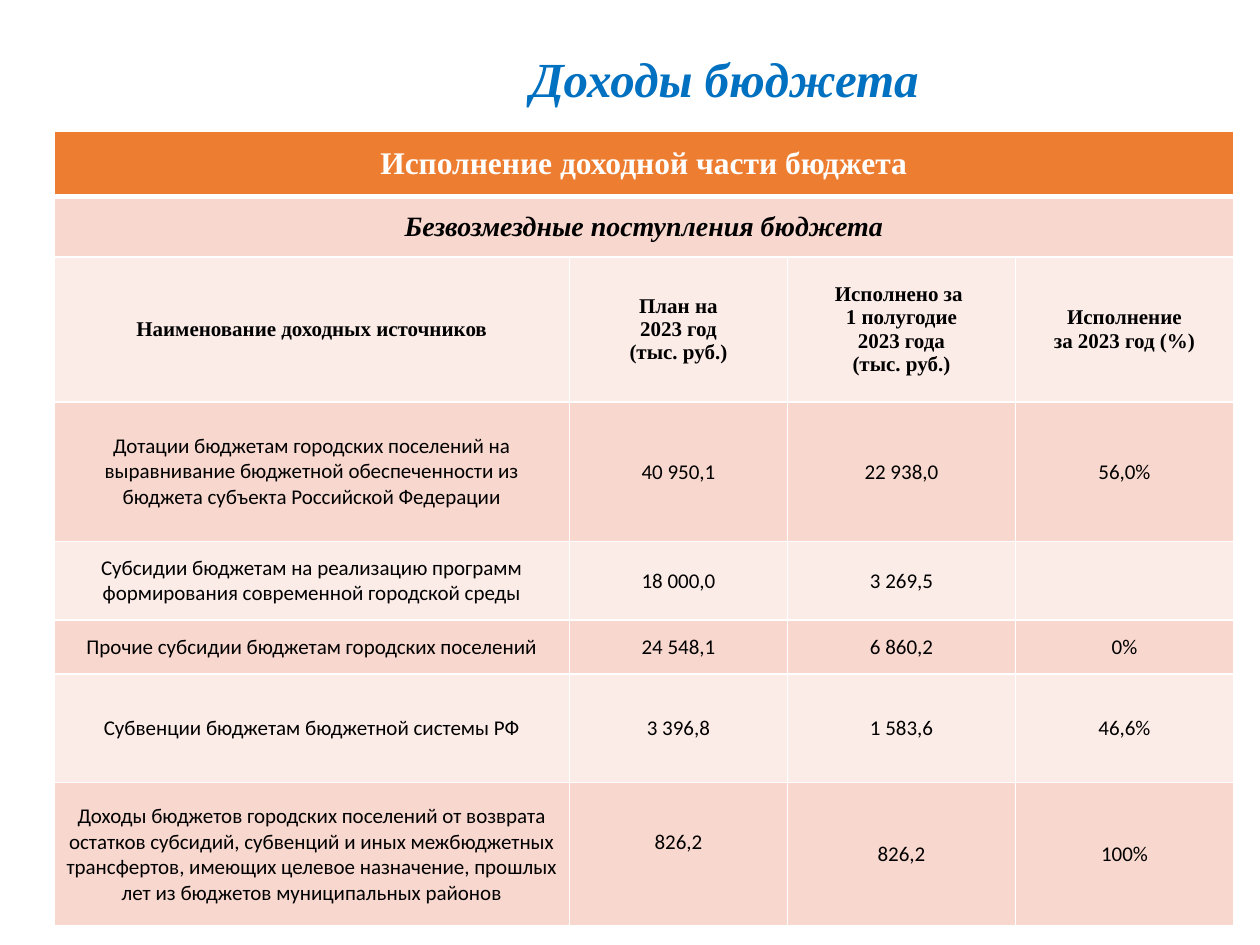
from lxml.etree import SubElement
from pptx import Presentation
from pptx.dml.color import RGBColor
from pptx.enum.text import MSO_ANCHOR, PP_ALIGN
from pptx.oxml.ns import qn
from pptx.util import Inches, Pt

BLUE = RGBColor(0x00, 0x70, 0xC0)
ORANGE = RGBColor(0xED, 0x7D, 0x31)
PEACH = RGBColor(0xF8, 0xD7, 0xCE)
PALE = RGBColor(0xFC, 0xEC, 0xE8)
WHITE = RGBColor(0xFF, 0xFF, 0xFF)
BLACK = RGBColor(0x00, 0x00, 0x00)
SERIF = "Times New Roman"

TITLE = "Доходы бюджета"
INCOME = [
    ("Исполнение доходной части бюджета", "", "", ""),
    ("Безвозмездные поступления бюджета", "", "", ""),
    (
        "Наименование доходных источников",
        "План на\n2023 год\n(тыс. руб.)",
        "Исполнено за \v1 полугодие\n2023 года\n(тыс. руб.)",
        "Исполнение\vза 2023 год (%)",
    ),
    (
        "Дотации бюджетам городских поселений на выравнивание бюджетной "
        "обеспеченности из бюджета субъекта Российской Федерации",
        "40 950,1", "22 938,0", "56,0%",
    ),
    (
        "Субсидии бюджетам на реализацию программ формирования "
        "современной городской среды",
        "18 000,0", "3 269,5", "",
    ),
    ("Прочие субсидии бюджетам городских поселений", "24 548,1", "6 860,2", "0%"),
    ("Субвенции бюджетам бюджетной системы РФ", "3 396,8", "1 583,6", "46,6%"),
    (
        "Доходы бюджетов городских поселений от возврата остатков субсидий, "
        "субвенций и иных межбюджетных трансфертов, имеющих целевое назначение, "
        "прошлых лет из бюджетов муниципальных районов",
        "826,2", "826,2", "100%",
    ),
]
COLUMN_WIDTHS = [4.09, 1.73, 1.81, 1.73]
ROW_HEIGHTS = [0.52, 0.48, 1.15, 1.11, 0.62, 0.43, 0.86, 1.14]
HEADING_FORMATS = [
    {"size": 18, "font": SERIF, "color": WHITE, "bold": True},
    {"size": 16, "font": SERIF, "bold": True, "italic": True},
    {"font": SERIF, "bold": True},
]


def write(frame, text, size=12, font="Calibri", color=BLACK, bold=False, italic=False):
    frame.text = text
    for paragraph in frame.paragraphs:
        paragraph.alignment = PP_ALIGN.CENTER
        paragraph.font.size = Pt(size)
        paragraph.font.name = font
        paragraph.font.color.rgb = color
        paragraph.font.bold = bold
        paragraph.font.italic = italic


def add_borders(cell, top, bottom):
    properties = cell._tc.get_or_add_tcPr()
    for side, width in (("L", 1), ("R", 1), ("T", top), ("B", bottom)):
        border = SubElement(properties, qn(f"a:ln{side}"), w=str(Pt(width)))
        fill = SubElement(border, qn("a:solidFill"))
        SubElement(fill, qn("a:srgbClr"), val=str(WHITE))


def add_title(slide):
    title = slide.shapes.title
    title.left, title.top = Inches(3.9), Inches(0.33)
    title.width, title.height = Inches(3.7), Inches(0.57)
    title.text_frame.word_wrap = True
    title.text_frame.vertical_anchor = MSO_ANCHOR.MIDDLE
    write(title.text_frame, TITLE, size=28, font=SERIF, color=BLUE, bold=True, italic=True)


def add_income_table(slide):
    table = slide.shapes.add_table(
        len(INCOME), len(COLUMN_WIDTHS), Inches(0.43), Inches(1.04),
        Inches(sum(COLUMN_WIDTHS)), Inches(sum(ROW_HEIGHTS)),
    ).table
    for column, width in zip(table.columns, COLUMN_WIDTHS):
        column.width = Inches(width)
    for row, height in zip(table.rows, ROW_HEIGHTS):
        row.height = Inches(height)

    for r, entries in enumerate(INCOME):
        text_format = HEADING_FORMATS[r] if r < len(HEADING_FORMATS) else {}
        row_color = ORANGE if r == 0 else PEACH if r % 2 else PALE
        for c, text in enumerate(entries):
            cell = table.cell(r, c)
            add_borders(cell, top=3 if r == 1 else 1, bottom=3 if r == 0 else 1)
            cell.fill.solid()
            cell.fill.fore_color.rgb = row_color
            cell.vertical_anchor = MSO_ANCHOR.MIDDLE
            if r >= 5 or (r >= 3 and c > 0):
                cell.margin_left = cell.margin_right = cell.margin_top = Inches(0.01)
                cell.margin_bottom = Inches(0)
            write(cell.text_frame, text, **text_format)

    for r in (0, 1):
        table.cell(r, 0).merge(table.cell(r, len(COLUMN_WIDTHS) - 1))
    table.cell(len(INCOME) - 1, 1).margin_bottom = Inches(0.2)


def main():
    presentation = Presentation()
    presentation.slide_width, presentation.slide_height = Inches(10), Inches(7.5)
    slide = presentation.slides.add_slide(presentation.slide_layouts[5])
    add_income_table(slide)
    add_title(slide)
    presentation.save("out.pptx")


if __name__ == "__main__":
    main()
